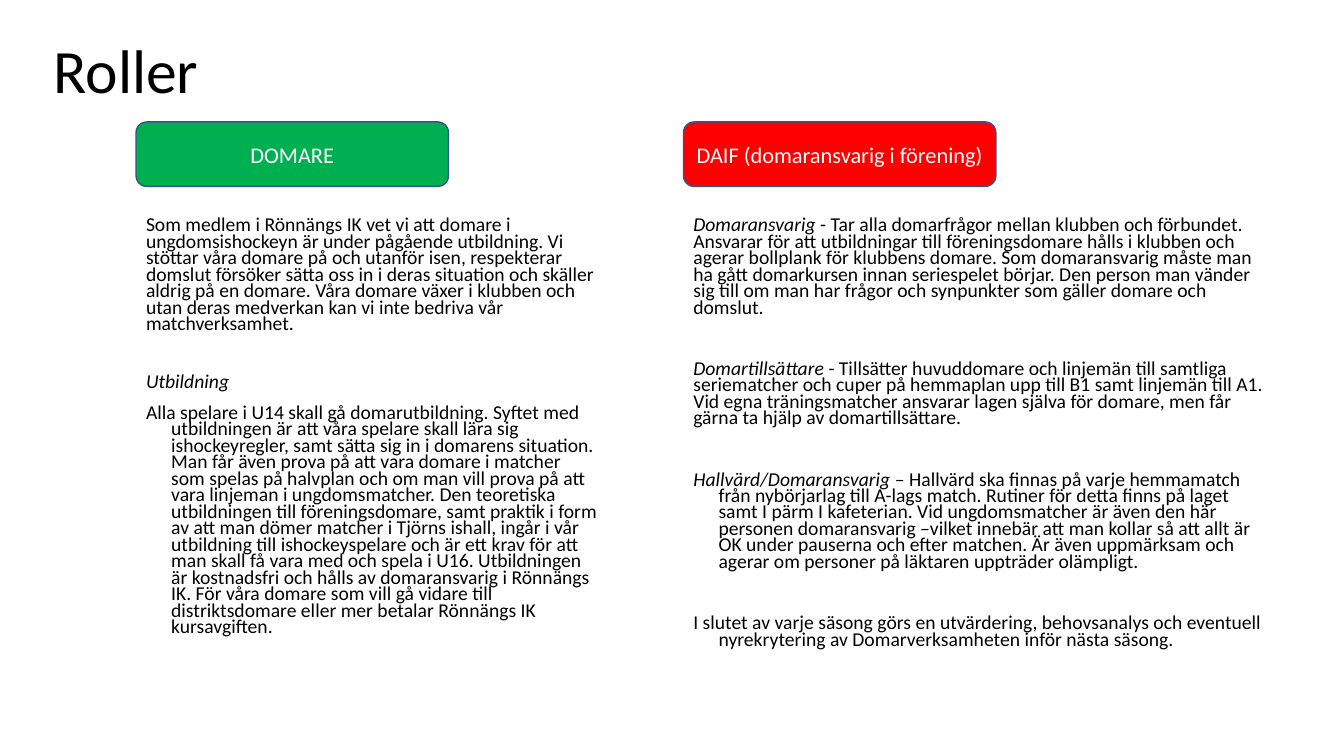
from pptx import Presentation
from pptx.dml.color import RGBColor
from pptx.enum.shapes import MSO_SHAPE as Shape
from pptx.enum.text import MSO_ANCHOR as Anchor, PP_ALIGN as Align
from pptx.util import Pt

BLACK = RGBColor(0x00, 0x00, 0x00)
WHITE = RGBColor(0xFF, 0xFF, 0xFF)
GREEN = RGBColor(0x00, 0xB0, 0x50)
RED = RGBColor(0xFF, 0x00, 0x00)
EDGE = RGBColor(0x32, 0x54, 0x91)


def put(frame, text, lead="", size=14, color=BLACK, align=Align.LEFT,
        lines=0.7, gap=0, hang=0):
    """Add a paragraph with an optional italic lead-in."""
    par = frame.paragraphs[0]
    if par.runs:
        par = frame.add_paragraph()
    par.alignment = align
    par.line_spacing = lines
    par.space_before = Pt(gap)
    if hang:
        props = par._p.get_or_add_pPr()
        props.set("marL", str(Pt(hang)))
        props.set("indent", str(-Pt(hang)))
    for part, slant in ((lead, True), (text, False)):
        if part:
            run = par.add_run()
            run.text = part
            font = run.font
            font.name, font.size, font.italic = "Calibri", Pt(size), slant
            font.color.rgb = color


# Role columns: left, text width, label, fill, paragraphs
roles = [
    (97.2, 337, "DOMARE", GREEN, [
        dict(text="Som medlem i Rönnängs IK vet vi att domare i ungdomsishockeyn "
             "är under pågående utbildning. Vi stöttar våra domare på och utanför "
             "isen, respekterar domslut försöker sätta oss in i deras situation "
             "och skäller aldrig på en domare. Våra domare växer i klubben och "
             "utan deras medverkan kan vi inte bedriva vår matchverksamhet."),
        dict(lead="Utbildning", text="", gap=30, hang=18),
        dict(text="Alla spelare i U14 skall gå domarutbildning. Syftet med "
             "utbildningen är att våra spelare skall lära sig ishockeyregler, "
             "samt sätta sig in i domarens situation. Man får även prova på att "
             "vara domare i matcher som spelas på halvplan och om man vill prova "
             "på att vara linjeman i ungdomsmatcher. Den teoretiska utbildningen "
             "till föreningsdomare, samt praktik i form av att man dömer matcher "
             "i Tjörns ishall, ingår i vår utbildning till ishockeyspelare och är "
             "ett krav för att man skall få vara med och spela i U16. Utbildningen "
             "är kostnadsfri och hålls av domaransvarig i Rönnängs IK. För våra "
             "domare som vill gå vidare till distriktsdomare eller mer betalar "
             "Rönnängs IK kursavgiften.", gap=10, hang=18),
    ]),
    (488.2, 427.7, "DAIF (domaransvarig i förening)", RED, [
        dict(lead="Domaransvarig",
             text=" - Tar alla domarfrågor mellan klubben och förbundet. Ansvarar "
             "för att utbildningar till föreningsdomare hålls i klubben och agerar "
             "bollplank för klubbens domare. Som domaransvarig måste man ha gått "
             "domarkursen innan seriespelet börjar. Den person man vänder sig till "
             "om man har frågor och synpunkter som gäller domare och domslut."),
        dict(lead="Domartillsättare",
             text=" - Tillsätter huvuddomare och linjemän till samtliga "
             "seriematcher och cuper på hemmaplan upp till B1 samt linjemän till "
             "A1. Vid egna träningsmatcher ansvarar lagen själva för domare, men "
             "får gärna ta hjälp av domartillsättare.", gap=32),
        dict(lead="Hallvärd/Domaransvarig",
             text=" – Hallvärd ska finnas på varje hemmamatch från nybörjarlag "
             "till A-lags match. Rutiner för detta finns på laget samt I pärm I "
             "kafeterian. Vid ungdomsmatcher är även den här personen "
             "domaransvarig –vilket innebär att man kollar så att allt är OK under "
             "pauserna och efter matchen. Är även uppmärksam och agerar om "
             "personer på läktaren uppträder olämpligt.", gap=32, hang=18),
        dict(text="I slutet av varje säsong görs en utvärdering, behovsanalys och "
             "eventuell nyrekrytering av Domarverksamheten inför nästa säsong.",
             gap=32, hang=18),
    ]),
]

deck = Presentation()
deck.slide_width, deck.slide_height = Pt(960), Pt(540)
slide = deck.slides.add_slide(deck.slide_layouts[5])

# Title
title = slide.shapes.title
title.left, title.top, title.width, title.height = Pt(31), Pt(0), Pt(502), Pt(104.4)
title.text_frame.vertical_anchor = Anchor.MIDDLE
put(title.text_frame, "Roller", size=44, lines=0.9)

for left, width, label, fill, paras in roles:
    # Label
    tag = slide.shapes.add_shape(Shape.ROUNDED_RECTANGLE,
                                 Pt(left), Pt(87.1), Pt(223.2), Pt(46.1))
    tag.shadow.inherit = False
    tag.fill.solid()
    tag.fill.fore_color.rgb = fill
    tag.line.color.rgb = EDGE
    tag.line.width = Pt(1)
    tag.text_frame.word_wrap = True
    tag.text_frame.vertical_anchor = Anchor.MIDDLE
    put(tag.text_frame, label, size=16, color=WHITE, align=Align.CENTER, lines=1.0)

    # Description
    box = slide.shapes.add_textbox(Pt(left), Pt(152.6), Pt(width), Pt(342.7))
    box.text_frame.word_wrap = True
    for para in paras:
        put(box.text_frame, **para)

deck.save("out.pptx")
